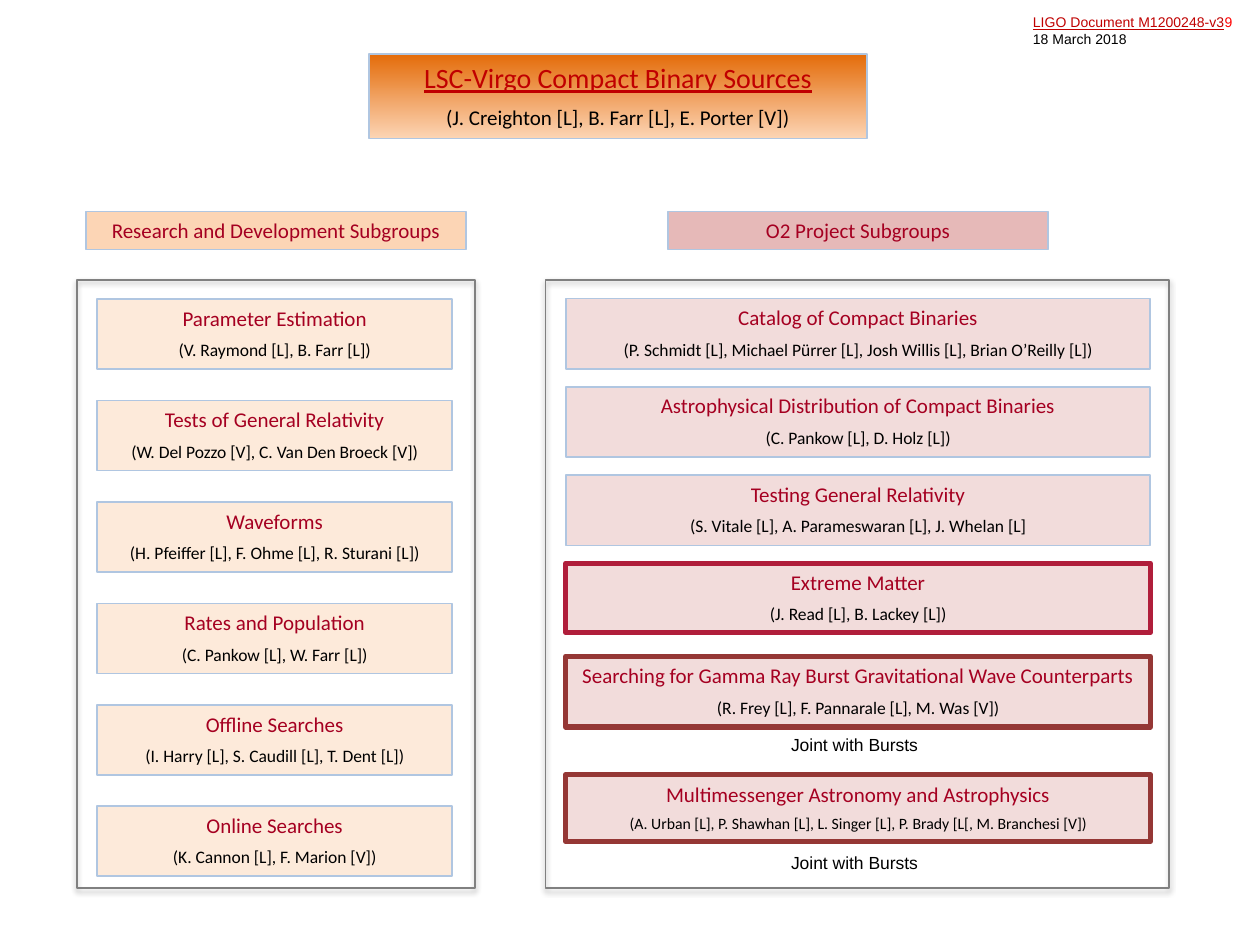
import dataclasses

import lxml.etree
import pptx
import pptx.dml.color
import pptx.enum.shapes
import pptx.enum.text
import pptx.oxml.ns
import pptx.util

COLUMNS, ROWS = 100, 75


@dataclasses.dataclass(frozen=True)
class Theme:
    heading_font: str = "Calibri"
    note_font: str = "Arial"
    title_size: int = 16
    heading_size: int = 12
    member_size: int = 10
    small_member_size: int = 9
    reference_size: int = 8
    ink: str = "000000"
    heading: str = "A50021"
    link: str = "C00000"
    revision: str = "FF0000"
    edge: str = "B0C6E1"
    frame: str = "808080"
    matter_edge: str = "B01E3B"
    joint_edge: str = "953735"
    title_top: str = "E46C0A"
    title_bottom: str = "FCD5B5"
    research: str = "FCD5B5"
    research_light: str = "FDEADA"
    project: str = "E6B9B8"
    project_light: str = "F2DCDB"


THEME = Theme()

RESEARCH_GROUPS = [
    ("Parameter Estimation", "(V. Raymond [L], B. Farr [L])"),
    ("Tests of General Relativity", "(W. Del Pozzo [V], C. Van Den Broeck [V])"),
    ("Waveforms", "(H. Pfeiffer [L], F. Ohme [L], R. Sturani [L])"),
    ("Rates and Population", "(C. Pankow [L], W. Farr [L])"),
    ("Offline Searches", "(I. Harry [L], S. Caudill [L], T. Dent [L])"),
    ("Online Searches", "(K. Cannon [L], F. Marion [V])"),
]

PROJECT_GROUPS = [
    ("Catalog of Compact Binaries",
     "(P. Schmidt [L], Michael Pürrer [L], Josh Willis [L], Brian O’Reilly [L])"),
    ("Astrophysical Distribution of Compact Binaries", "(C. Pankow [L], D. Holz [L])"),
    ("Testing General Relativity", "(S. Vitale [L], A. Parameswaran [L], J. Whelan [L]"),
]

# top row, height, edge colour, member text size, heading, members
HIGHLIGHTED_GROUPS = [
    (44.7, 5.5, THEME.matter_edge, THEME.member_size,
     "Extreme Matter", "(J. Read [L], B. Lackey [L])"),
    (52.1, 5.6, THEME.joint_edge, THEME.member_size,
     "Searching for Gamma Ray Burst Gravitational Wave Counterparts",
     "(R. Frey [L], F. Pannarale [L], M. Was [V])"),
    (61.5, 5.3, THEME.joint_edge, THEME.small_member_size,
     "Multimessenger Astronomy and Astrophysics",
     "(A. Urban [L], P. Shawhan [L], L. Singer [L], P. Brady [L[, M. Branchesi [V])"),
]


def rgb(value):
    return pptx.dml.color.RGBColor.from_string(value)


def assign(target, values):
    for name, value in values.items():
        setattr(target, name, value)


class ChartSlide:
    """Style and current slide; boxes are (column, row, columns, rows)."""

    def __init__(self, presentation, theme):
        self.theme = theme
        self.slide = presentation.slides.add_slide(presentation.slide_layouts[5])
        self.cell_width = presentation.slide_width / COLUMNS
        self.cell_height = presentation.slide_height / ROWS

    def place(self, box):
        column, row, columns, rows = box
        return [round(column * self.cell_width), round(row * self.cell_height),
                round(columns * self.cell_width), round(rows * self.cell_height)]

    def set_text(self, shape, lines, font, centred=True, wrap=True):
        """Fill the shape; each line is a list of (text, size, colour, underline) runs."""
        frame = shape.text_frame
        assign(frame, {"word_wrap": wrap,
                       "auto_size": pptx.enum.text.MSO_AUTO_SIZE.NONE,
                       "vertical_anchor": pptx.enum.text.MSO_ANCHOR.TOP})
        align = pptx.enum.text.PP_ALIGN
        for index, runs in enumerate(lines):
            paragraph = frame.add_paragraph() if index else frame.paragraphs[0]
            paragraph.alignment = align.CENTER if centred else align.LEFT
            if centred and index:
                paragraph.space_before = pptx.util.Pt(runs[0][1] / 2)
            for text, size, colour, underline in runs:
                run = paragraph.add_run()
                run.text = text
                assign(run.font, {"name": font, "size": pptx.util.Pt(size),
                                  "underline": underline})
                run.font.color.rgb = rgb(colour)

    def outline(self, shape, colour, width=1):
        shape.line.color.rgb = rgb(colour)
        shape.line.width = pptx.util.Pt(width)

    def rectangle(self, box, edge, width=1):
        shape = self.slide.shapes.add_shape(
            pptx.enum.shapes.MSO_SHAPE.RECTANGLE, *self.place(box))
        shape.shadow.inherit = False
        self.outline(shape, edge, width)
        return shape

    def title(self, box, heading, members):
        shape = self.slide.shapes.title
        assign(shape, dict(zip(("left", "top", "width", "height"), self.place(box))))
        shape.fill.gradient()
        shape.fill.gradient_angle = 270
        colours = (self.theme.title_top, self.theme.title_bottom)
        for stop, colour in zip(shape.fill.gradient_stops, colours):
            stop.color.rgb = rgb(colour)
        self.outline(shape, self.theme.edge)
        self.set_text(shape, [[(heading, self.theme.title_size, self.theme.link, True)],
                              [(members, self.theme.heading_size, self.theme.ink, False)]],
                      self.theme.heading_font)

    def group(self, box, fill, heading, members=None, edge=None, width=1, size=None):
        theme = self.theme
        shape = self.rectangle(box, edge or theme.edge, width)
        shape.fill.solid()
        shape.fill.fore_color.rgb = rgb(fill)
        lines = [[(heading, theme.heading_size, theme.heading, False)]]
        if members:
            lines.append([(members, size or theme.member_size, theme.ink, False)])
        self.set_text(shape, lines, theme.heading_font)

    def frame(self, box):
        shape = self.rectangle(box, self.theme.frame)
        shape.fill.background()
        qualified = pptx.oxml.ns.qn
        effects = shape.element.spPr.find(qualified("a:effectLst"))
        shadow = lxml.etree.SubElement(
            effects, qualified("a:outerShdw"), blurRad=str(pptx.util.Pt(3.1)),
            dist=str(pptx.util.Pt(1.8)), dir="5400000", rotWithShape="0")
        colour = lxml.etree.SubElement(shadow, qualified("a:srgbClr"), val=self.theme.ink)
        lxml.etree.SubElement(colour, qualified("a:alpha"), val="35000")

    def note(self, box, lines, wrap=False):
        shape = self.slide.shapes.add_textbox(*self.place(box))
        self.set_text(shape, lines, self.theme.note_font, centred=False, wrap=wrap)


def main():
    presentation = pptx.Presentation()
    presentation.slide_width = pptx.util.Inches(10)
    presentation.slide_height = pptx.util.Inches(7.5)
    chart = ChartSlide(presentation, THEME)

    size = THEME.reference_size
    chart.note((81, 0.6, 18.4, 3.7),
               [[("LIGO Document M1200248-v3", size, THEME.link, True),
                 ("9", size, THEME.revision, False)],
                [("18 March 2018", size, THEME.ink, False)]], wrap=True)
    chart.title((29.3, 4.3, 39.5, 6.7), "LSC-Virgo Compact Binary Sources",
                "(J. Creighton [L], B. Farr [L], E. Porter [V])")
    chart.group((53, 16.8, 30.2, 3), THEME.project, "O2 Project Subgroups")
    chart.group((6.8, 16.8, 30.2, 3), THEME.research, "Research and Development Subgroups")

    for index, (heading, members) in enumerate(PROJECT_GROUPS):
        chart.group((44.9, 23.7 + 7 * index, 46.4, 5.6), THEME.project_light,
                    heading, members)
    for index, (heading, members) in enumerate(RESEARCH_GROUPS):
        chart.group((7.7, 23.75 + 8.05 * index, 28.2, 5.55), THEME.research_light,
                    heading, members)
    for row, height, edge, member_size, heading, members in HIGHLIGHTED_GROUPS:
        chart.group((44.9, row, 46.4, height), THEME.project_light, heading, members,
                    edge, 3, member_size)

    for column, width in ((43.3, 49.5), (6.1, 31.6)):
        chart.frame((column, 22.2, width, 48.3))
    for row in (57.8, 67.1):
        chart.note((61.8, row, 12.6, 2.7),
                   [[("Joint with Bursts", THEME.member_size, THEME.ink, False)]])

    presentation.save("out.pptx")


if __name__ == "__main__":
    main()
